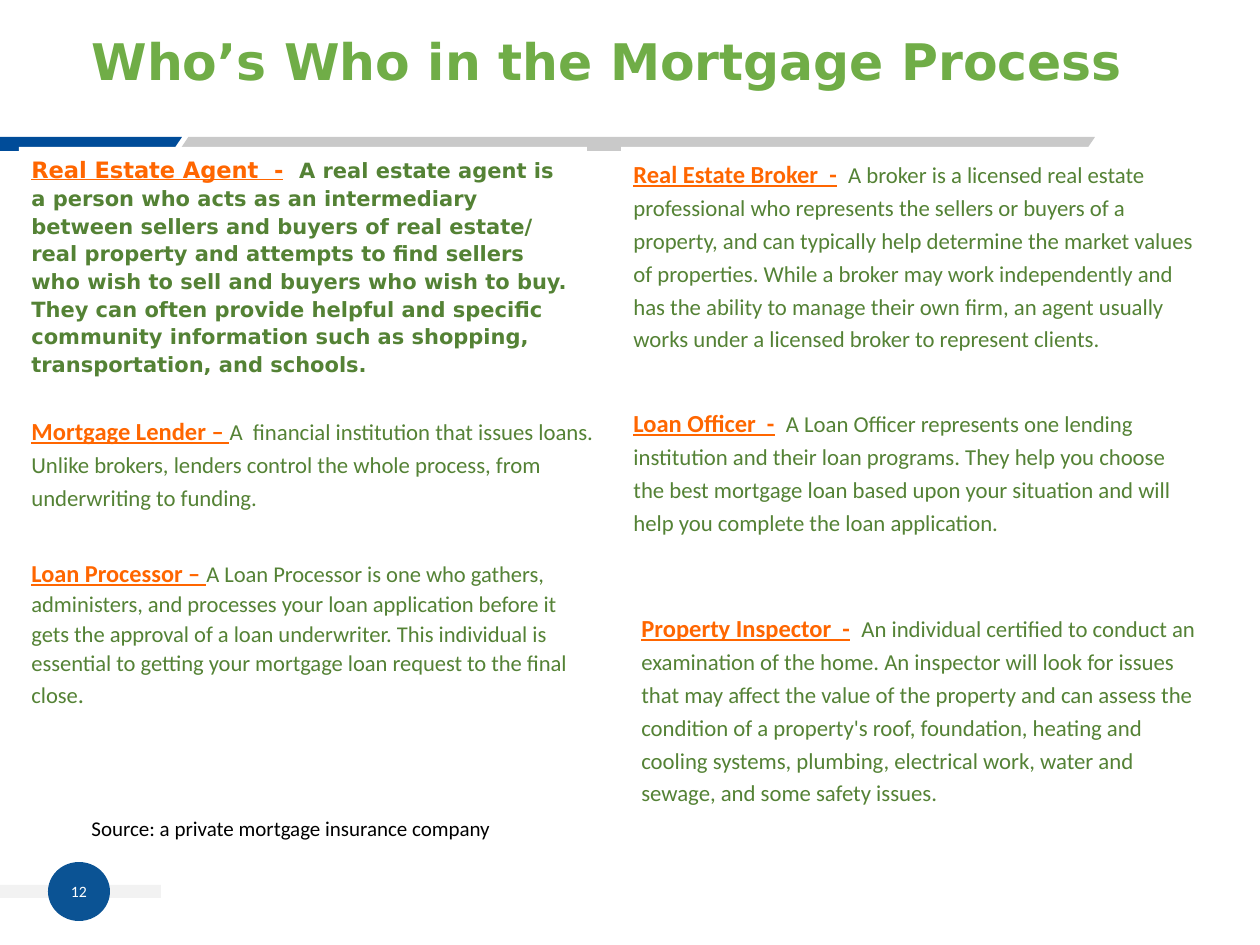
"""Build the slide that introduces the people in the mortgage process."""
from dataclasses import dataclass

from pptx import Presentation
from pptx.dml.color import RGBColor
from pptx.enum.shapes import MSO_SHAPE
from pptx.enum.text import MSO_ANCHOR, MSO_AUTO_SIZE, PP_ALIGN
from pptx.util import Emu, Inches, Pt

EMU_PER_PX = 914400 / 126
COLORS = {
    "title": "70AD47", "term": "FF6600", "body": "548235", "source": "000000",
    "white": "FFFFFF", "bar": "C9C9C9", "accent": "004C99",
    "strip": "F2F2F2", "badge": "0B5394",
}


@dataclass(frozen=True)
class Box:
    left: int
    top: int
    width: int
    height: int

    def emu(self) -> tuple:
        return tuple(Emu(round(side * EMU_PER_PX))
                     for side in (self.left, self.top, self.width, self.height))


@dataclass(frozen=True)
class Run:
    text: str
    size: float
    color: str
    bold: bool = False
    underline: bool = False
    font: str = "Calibri"


@dataclass(frozen=True)
class Role:
    box: Box
    term: str
    definition: str
    gap: str = ""
    ending: str = ""
    term_size: float = 14
    body_size: float = 13
    line_spacing: float = 1.2
    font: str = "Calibri"
    bold_body: bool = False

    def runs(self) -> list[Run]:
        parts = [
            Run(self.term, self.term_size, "term", True, True, self.font),
            Run(self.gap, self.term_size, "term", True, False, self.font),
            Run(self.definition, self.body_size, "body", self.bold_body, False, self.font),
            Run(self.ending, self.term_size, "body", self.bold_body, False, self.font),
        ]
        return [part for part in parts if part.text]


@dataclass(frozen=True)
class Decoration:
    box: Box
    preset: MSO_SHAPE
    color: str


DECORATIONS = [
    Decoration(Box(179, 137, 916, 14), MSO_SHAPE.PARALLELOGRAM, "bar"),
    Decoration(Box(-45, 137, 227, 14), MSO_SHAPE.PARALLELOGRAM, "accent"),
    Decoration(Box(0, 885, 161, 13), MSO_SHAPE.RECTANGLE, "strip"),
    Decoration(Box(48, 862, 62, 59), MSO_SHAPE.OVAL, "badge"),
]

ROLES = [
    Role(Box(19, 147, 568, 284), "Real Estate Agent  -",
         "A real estate agent is a person who acts as an intermediary between sellers and "
         "buyers of real estate/ real property and attempts to find sellers who wish to sell "
         "and buyers who wish to buy. They can often provide helpful and specific community "
         "information such as shopping, transportation, and schools.",
         gap="  ", term_size=12.9, body_size=12, line_spacing=1.1,
         font="DejaVu Sans", bold_body=True),
    Role(Box(621, 147, 588, 257), "Real Estate Broker  -",
         "A broker is a licensed real estate professional who represents the sellers or "
         "buyers of a property, and can typically help determine the market values of "
         "properties. While a broker may work independently and has the ability to manage "
         "their own firm, an agent usually works under a licensed broker to represent clients.",
         gap="  "),
    Role(Box(19, 404, 588, 121), "Mortgage Lender – ",
         "A  financial institution that issues loans. Unlike brokers, lenders control the "
         "whole process, from underwriting to funding."),
    Role(Box(621, 396, 588, 257), "Loan Officer  -",
         "A Loan Officer represents one lending institution and their loan programs. They "
         "help you choose the best mortgage loan based upon your situation and will help you "
         "complete the loan application.",
         gap="  "),
    Role(Box(19, 549, 588, 179), "Loan Processor – ",
         "A Loan Processor is one who gathers, administers, and processes your loan "
         "application before it gets the approval of a loan underwriter. This individual is "
         "essential to getting your mortgage loan request to the final close",
         ending=".", term_size=13.9, body_size=12.9, line_spacing=1.1),
    Role(Box(629, 601, 582, 257), "Property Inspector  -",
         "An individual certified to conduct an examination of the home. An inspector will "
         "look for issues that may affect the value of the property and can assess the "
         "condition of a property's roof, foundation, heating and cooling systems, plumbing, "
         "electrical work, water and sewage, and some safety issues.",
         gap="  "),
]


def rgb(name: str) -> RGBColor:
    return RGBColor.from_string(COLORS[name])


def write(frame, runs: list[Run], line_spacing: float = 1.0,
          anchor=MSO_ANCHOR.TOP, align=PP_ALIGN.LEFT):
    frame.word_wrap = True
    frame.auto_size = MSO_AUTO_SIZE.NONE
    frame.vertical_anchor = anchor
    paragraph = frame.paragraphs[0]
    paragraph.alignment = align
    paragraph.line_spacing = line_spacing
    for part in runs:
        run = paragraph.add_run()
        run.text = part.text
        run.font.name = part.font
        run.font.size = Pt(part.size)
        run.font.bold = part.bold
        run.font.underline = part.underline
        run.font.color.rgb = rgb(part.color)
    return paragraph


def add_filled(slide, box: Box, preset: MSO_SHAPE, color: str):
    shape = slide.shapes.add_shape(preset, *box.emu())
    shape.shadow.inherit = False
    shape.fill.solid()
    shape.fill.fore_color.rgb = rgb(color)
    shape.line.fill.background()
    return shape


def add_decoration(slide, decoration: Decoration) -> None:
    shape = add_filled(slide, decoration.box, decoration.preset, decoration.color)
    if decoration.preset == MSO_SHAPE.PARALLELOGRAM:
        shape.adjustments[0] = 0.67


def add_role(slide, role: Role) -> None:
    panel = add_filled(slide, role.box, MSO_SHAPE.RECTANGLE, "white")
    paragraph = write(panel.text_frame, role.runs(), role.line_spacing)
    paragraph.space_after = Pt(6)


def add_page_number(slide) -> None:
    frame = slide.shapes.add_textbox(*Box(48, 864, 62, 54).emu()).text_frame
    frame.margin_left = frame.margin_right = frame.margin_top = frame.margin_bottom = 0
    write(frame, [Run("12", 9, "white")], anchor=MSO_ANCHOR.MIDDLE, align=PP_ALIGN.CENTER)


def format_title(slide) -> None:
    title = slide.shapes.title
    title.left, title.top, title.width, title.height = Box(79, 26, 1123, 76).emu()
    heading = Run("Who’s Who in the Mortgage Process", 28.8, "title", True, font="DejaVu Sans")
    write(title.text_frame, [heading], 0.9, MSO_ANCHOR.MIDDLE)


def add_source(slide) -> None:
    source = slide.shapes.add_textbox(*Box(79, 809, 963, 38).emu())
    write(source.text_frame,
          [Run("Source: a private mortgage insurance company", 12, "source")])


def main() -> None:
    deck = Presentation()
    deck.slide_width, deck.slide_height = Inches(10), Inches(7.5)
    slide = deck.slides.add_slide(deck.slide_layouts[5])
    for decoration in DECORATIONS:
        add_decoration(slide, decoration)
    add_page_number(slide)
    format_title(slide)
    for role in ROLES:
        add_role(slide, role)
    add_source(slide)
    deck.save("out.pptx")


if __name__ == "__main__":
    main()
